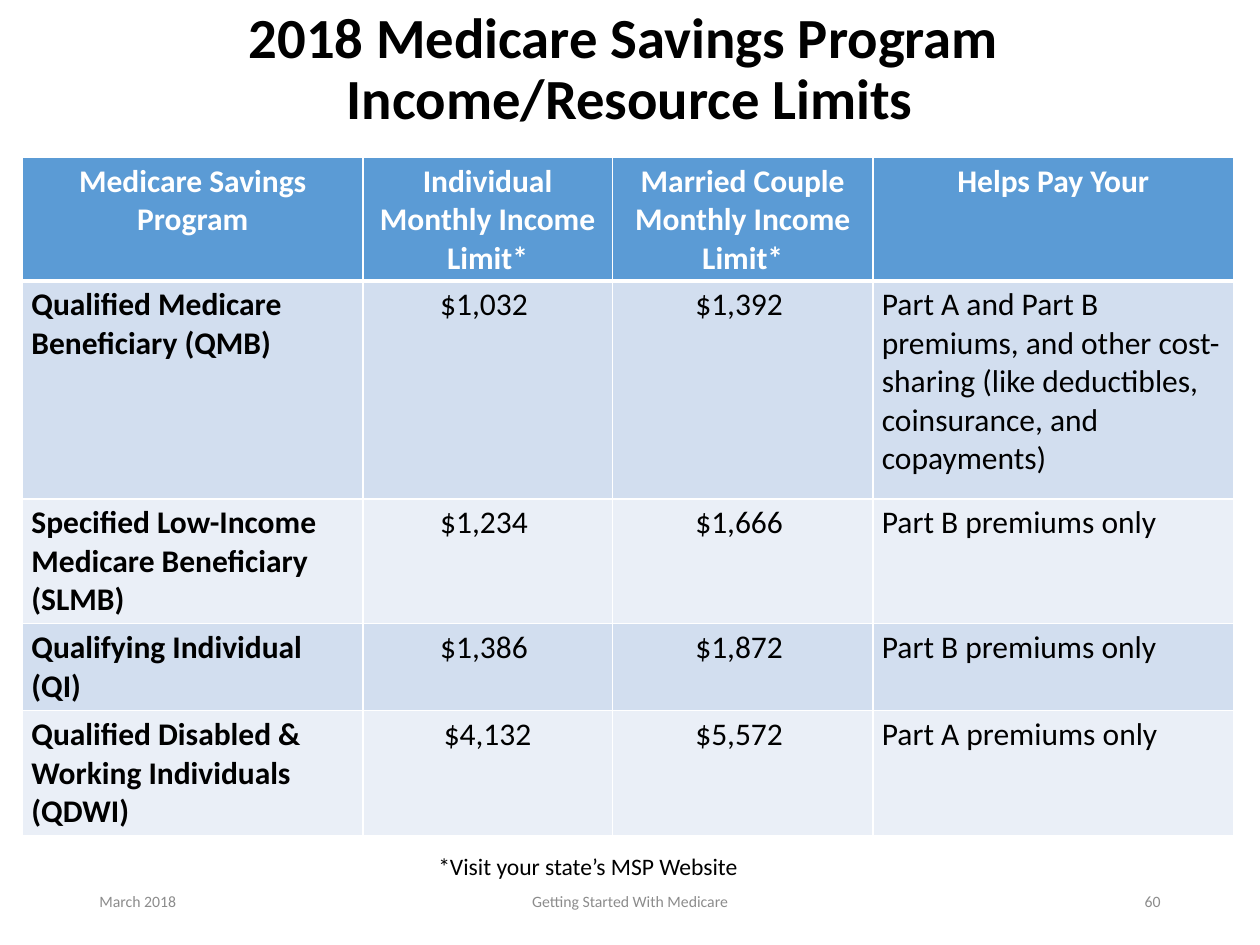
from dataclasses import dataclass

from lxml.etree import SubElement
from pptx import Presentation
from pptx.dml.color import RGBColor as RGB
from pptx.enum.text import MSO_ANCHOR as Anchor, PP_ALIGN as Align
from pptx.oxml.ns import qn
from pptx.util import Inches, Pt


@dataclass(frozen=True)
class Theme:
    """Hold the colours, font and type sizes of the slide."""
    font: str = "Calibri"
    black: str = "000000"
    white: str = "FFFFFF"
    grey: str = "8C8C8C"
    header: str = "5B9BD5"
    bands: tuple = ("D2DEEF", "EAEFF7")
    title_size: float = 32.4
    table_size: float = 18
    note_size: float = 13.5
    footer_size: float = 9
    rule: float = 1
    header_rule: float = 3


class SlideBuilder:
    """Draw styled elements on the current slide."""

    def __init__(self, slide, theme):
        """Keep the slide and its theme."""
        self.s = slide
        self.theme = theme

    def add_runs(self, p, text, size, color, bold=False, align=Align.LEFT):
        """Fill a paragraph with one run per line."""
        p.alignment = align
        for i, line in enumerate(text.split("\n")):
            if i:
                p.add_line_break()
            r = p.add_run()
            r.text = line
            r.font.name = self.theme.font
            r.font.size = Pt(size)
            r.font.bold = bold
            r.font.color.rgb = RGB.from_string(color)

    def add_text(self, box, text, size, color, anchor=Anchor.MIDDLE, spacing=None, **style):
        """Add a wrapped text box."""
        sp = self.s.shapes.add_textbox(*map(Inches, box))
        tf = sp.text_frame
        tf.word_wrap = True
        tf.vertical_anchor = anchor
        p = tf.paragraphs[0]
        if spacing:
            p.line_spacing = spacing
        self.add_runs(p, text, size, color, **style)

    def add_borders(self, cell, top, bottom):
        """Rule the four sides of a cell in white."""
        rule = self.theme.rule
        tc_pr = cell._tc.get_or_add_tcPr()
        for side, width in zip("LRTB", (rule, rule, top, bottom)):
            ln = SubElement(tc_pr, qn(f"a:ln{side}"), w=str(Pt(width)))
            fill = SubElement(ln, qn("a:solidFill"))
            SubElement(fill, qn("a:srgbClr"), val=self.theme.white)

    def fill_cell(self, cell, text, row, col):
        """Style and fill one table cell by its place in the grid."""
        t = self.theme
        head = row == 0
        self.add_borders(cell, t.header_rule if row == 1 else t.rule,
                         t.header_rule if head else t.rule)
        cell.fill.solid()
        cell.fill.fore_color.rgb = RGB.from_string(
            t.header if head else t.bands[(row - 1) % 2])
        cell.margin_left = cell.margin_right = Inches(0.07)
        cell.margin_top = cell.margin_bottom = Inches(0.04)
        self.add_runs(cell.text_frame.paragraphs[0], text, t.table_size,
                      t.white if head else t.black, bold=head or col == 0,
                      align=Align.CENTER if head or col in (1, 2) else Align.LEFT)

    def add_table(self, left, top, widths, heights, rows):
        """Add a banded table with a header row."""
        table = self.s.shapes.add_table(
            len(heights), len(widths), Inches(left), Inches(top),
            Inches(sum(widths)), Inches(sum(heights))).table
        for column, width in zip(table.columns, widths):
            column.width = Inches(width)
        for i, (height, values) in enumerate(zip(heights, rows)):
            table.rows[i].height = Inches(height)
            for j, value in enumerate(values):
                self.fill_cell(table.cell(i, j), value, i, j)


LIMITS = [
    ("Medicare Savings Program", "Individual Monthly Income Limit*",
     "Married Couple Monthly Income Limit*", "Helps Pay Your"),
    ("Qualified Medicare Beneficiary (QMB)", "$1,032 ", "$1,392 ",
     "Part A and Part B premiums, and other cost-sharing "
     "(like deductibles, coinsurance, and copayments)"),
    ("Specified Low-Income Medicare Beneficiary (SLMB)", "$1,234 ", "$1,666 ",
     "Part B premiums only"),
    ("Qualifying Individual (QI)", "$1,386 ", "$1,872 ", "Part B premiums only"),
    ("Qualified Disabled & Working Individuals (QDWI)", "$4,132", "$5,572 ",
     "Part A premiums only"),
]
FOOTERS = [
    (0.69, 2.25, "March 2018", Align.LEFT),
    (3.31, 3.38, "Getting Started With Medicare", Align.CENTER),
    (7.06, 2.25, "60", Align.RIGHT),
]


def main():
    """Build and save the slide."""
    prs = Presentation()
    prs.slide_width, prs.slide_height = Inches(10), Inches(7.5)
    t = Theme()
    b = SlideBuilder(prs.slides.add_slide(prs.slide_layouts[6]), t)
    b.add_text((0.69, 0, 8.62, 1.12),
               "2018 Medicare Savings Program \nIncome/Resource Limits",
               t.title_size, t.black, spacing=0.9, bold=True, align=Align.CENTER)
    b.add_table(0.18, 1.25, (2.7, 1.98, 2.07, 2.86),
                (0.98, 1.73, 0.99, 0.69, 0.99), LIMITS)
    b.add_text((3.38, 6.71, 4.19, 0.33), "*Visit your state’s MSP Website",
               t.note_size, t.black, anchor=Anchor.TOP)
    for left, width, label, align in FOOTERS:
        b.add_text((left, 6.95, width, 0.4), label, t.footer_size, t.grey, align=align)
    prs.save("out.pptx")


if __name__ == "__main__":
    main()
